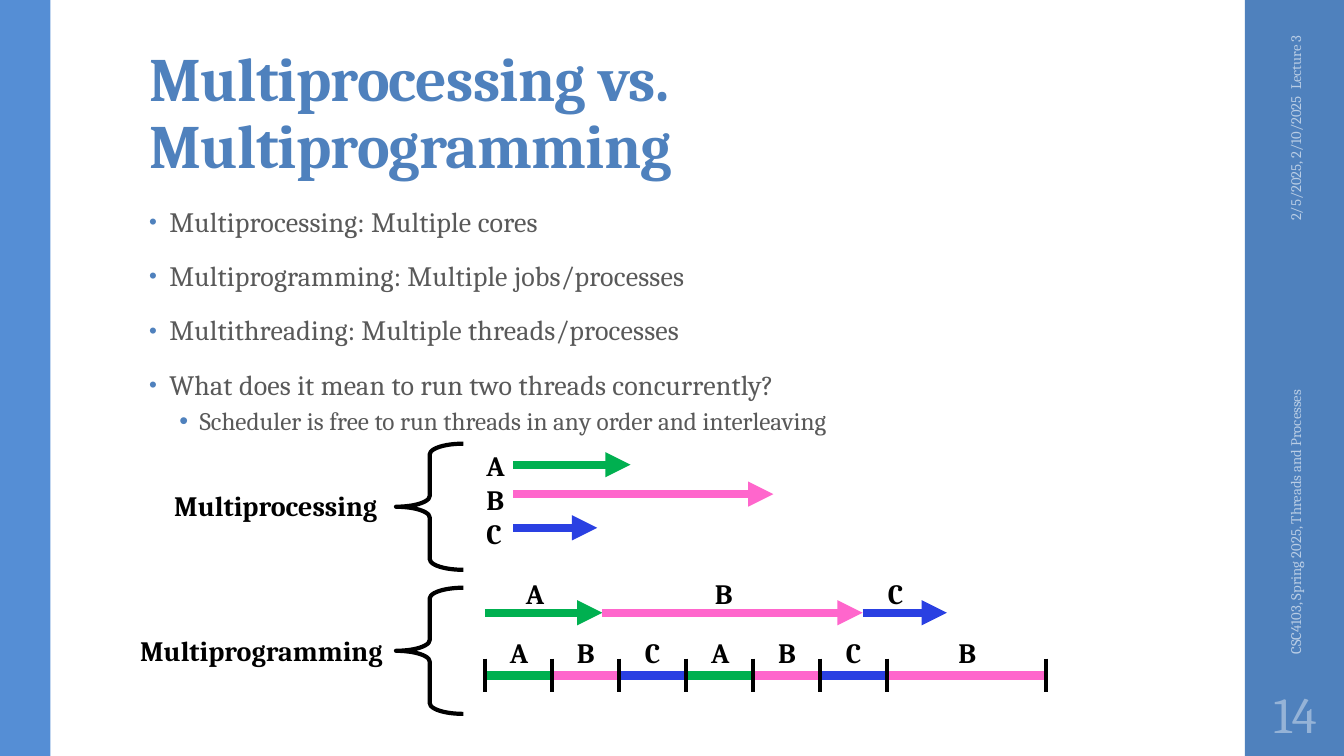
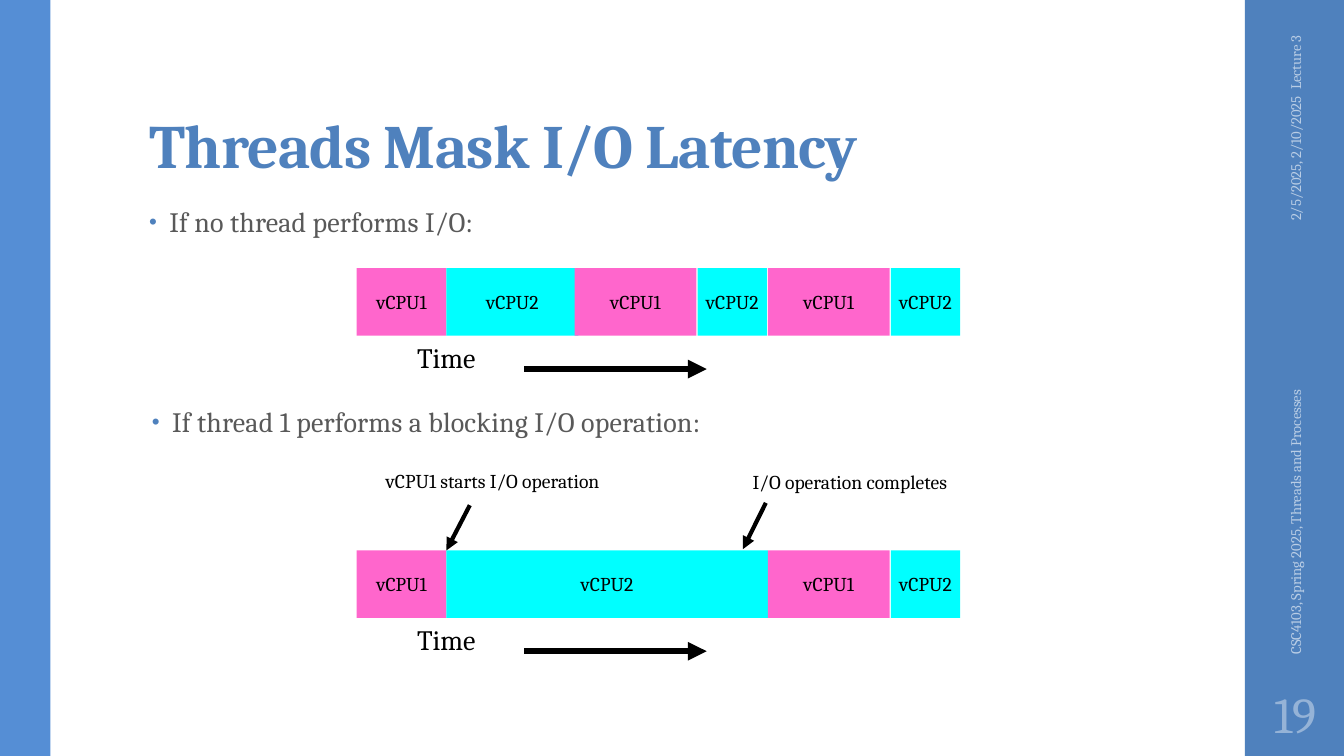
import lxml.etree
import pptx
import pptx.dml.color
import pptx.enum.shapes
import pptx.enum.text
import pptx.oxml.ns
import pptx.util

Cm = pptx.util.Cm
Pt = pptx.util.Pt
qn = pptx.oxml.ns.qn
ALIGN = pptx.enum.text.PP_ALIGN
ANCHOR = pptx.enum.text.MSO_ANCHOR
SHAPES = pptx.enum.shapes.MSO_SHAPE

FONT = "Cambria"
COLORS = {
    "accent": "4F81BD", "left band": "558ED5", "footer": "B9CDE5",
    "number": "95B3D7", "body": "595959", "black": "000000",
    "A": "00B050", "B": "FF66CC", "C": "2A40E2",
    "vCPU1": "FF66CC", "vCPU2": "00FFFF",
}
SLIDE_WIDTH, SLIDE_HEIGHT = 33.87, 19.05
RIGHT_BAND = 31.37
LABEL_HEIGHT, LETTER_WIDTH = 1.12, 0.93


def rgb(name):
    return pptx.dml.color.RGBColor.from_string(COLORS[name])


# Text
def write(paragraph, text, size=20, color="black", bold=False, align=ALIGN.LEFT,
          line=None, before=0, after=0, tracking=0):
    paragraph.alignment = align
    paragraph.line_spacing = line
    paragraph.space_before, paragraph.space_after = Pt(before), Pt(after)
    run = paragraph.add_run()
    run.text = text
    run.font.name, run.font.size, run.font.bold = FONT, Pt(size), bold
    run.font.color.rgb = rgb(color)
    if tracking:
        run.font._element.set("spc", str(round(tracking * 100)))


def add_label(slide, text, left, top, width, height=LABEL_HEIGHT, wrap=False,
              anchor=ANCHOR.TOP, rotation=0, **style):
    label = slide.shapes.add_textbox(Cm(left), Cm(top), Cm(width), Cm(height))
    label.rotation = rotation
    frame = label.text_frame
    frame.word_wrap = wrap
    frame.vertical_anchor = anchor
    write(frame.paragraphs[0], text, **style)


def add_letter(slide, letter, center, top):
    add_label(slide, letter, center - LETTER_WIDTH / 2, top, LETTER_WIDTH,
              bold=True, align=ALIGN.CENTER)


def add_bullets(slide, left, top, height, items):
    body = slide.shapes.add_textbox(Cm(left), Cm(top), Cm(23.88), Cm(height))
    frame = body.text_frame
    frame.word_wrap = True
    for index, (level, text) in enumerate(items):
        paragraph = frame.paragraphs[0] if index == 0 else frame.add_paragraph()
        if level == 0:
            write(paragraph, text, color="body", line=0.95, before=14, after=2, tracking=0.1)
        else:
            write(paragraph, text, size=18, color="body", line=0.9, before=3, after=3)
        paragraph.level = level
        properties = paragraph._p.get_or_add_pPr()
        properties.set("marL", str(Cm(0.51 + 0.76 * level)))
        properties.set("indent", str(-Cm(0.51)))
        tint = lxml.etree.SubElement(properties, qn("a:buClr"))
        lxml.etree.SubElement(tint, qn("a:srgbClr"), val=COLORS["accent"])
        lxml.etree.SubElement(properties, qn("a:buSzPct"), val="100000" if level else "80000")
        lxml.etree.SubElement(properties, qn("a:buFont"), typeface="Arial")
        lxml.etree.SubElement(properties, qn("a:buChar"), char="•")


# Shapes and lines
def add_block(slide, left, top, width, height, color):
    block = slide.shapes.add_shape(SHAPES.RECTANGLE, Cm(left), Cm(top), Cm(width), Cm(height))
    block.shadow.inherit = False
    block.fill.solid()
    block.fill.fore_color.rgb = rgb(color)
    block.line.fill.background()
    return block


def add_brace(slide, top):
    brace = slide.shapes.add_shape(SHAPES.LEFT_BRACE, Cm(9.98), Cm(top), Cm(1.7), Cm(3.18))
    brace.shadow.inherit = False
    brace.adjustments[0] = 0.16
    brace.fill.background()
    brace.line.color.rgb = rgb("black")
    brace.line.width = Pt(3)


def add_line(slide, start, end, color="black", weight=3.0, arrow=False):
    line = slide.shapes.add_connector(
        pptx.enum.shapes.MSO_CONNECTOR.STRAIGHT, *(Cm(value) for value in start + end))
    line.line.color.rgb = rgb(color)
    line.line.width = Pt(weight)
    properties = line._element.spPr
    if arrow:
        lxml.etree.SubElement(properties.find(qn("a:ln")), qn("a:tailEnd"), type="triangle")
    lxml.etree.SubElement(properties, qn("a:effectLst"))


# Frame shared by all slides
def add_slide(deck, title, number):
    slide = deck.slides.add_slide(deck.slide_layouts.get_by_name("Title Only"))
    add_block(slide, RIGHT_BAND, 0, SLIDE_WIDTH - RIGHT_BAND, SLIDE_HEIGHT, "accent")
    add_block(slide, 0, 0, 1.27, SLIDE_HEIGHT, "left band")

    heading = slide.shapes.title
    heading.left, heading.top, heading.width, heading.height = (
        Cm(3.51), Cm(0.81), Cm(26.92), Cm(3.89))
    frame = heading.text_frame
    frame.auto_size = pptx.enum.text.MSO_AUTO_SIZE.NONE
    frame.word_wrap = True
    frame.vertical_anchor = ANCHOR.BOTTOM
    frame.margin_top = Cm(0.08)
    write(frame.paragraphs[0], title, size=44, color="accent", bold=True, line=0.9, tracking=-0.5)

    footer = dict(height=1.02, wrap=True, anchor=ANCHOR.MIDDLE, rotation=270,
                  size=10.5, color="footer")
    add_label(slide, "2/5/2025, 2/10/2025  Lecture 3", 30, 2.77, 5.28,
              align=ALIGN.RIGHT, **footer)
    add_label(slide, "CSC4103, Spring 2025, Threads and Processes", 27.66, 11.25, 9.96, **footer)
    add_label(slide, number, RIGHT_BAND, 17.15, 2.54, 1.65, anchor=ANCHOR.MIDDLE,
              size=36, color="number", align=ALIGN.CENTER)
    return slide


# Multiprocessing: one row for each job
def draw_multiprocessing(slide, jobs):
    add_label(slide, "Multiprocessing", 4.14, 12.19, 6.05, bold=True)
    add_brace(slide, 11.18)
    for row, ((job, length), y) in enumerate(zip(jobs, (11.71, 12.45, 13.3))):
        add_label(slide, job, 12.01, 11.18 + 0.86 * row, LETTER_WIDTH, bold=True)
        add_line(slide, (12.93, y), (12.93 + length, y), job, 6, arrow=True)


# Multiprogramming: jobs in sequence, then interleaved
def draw_multiprogramming(slide, jobs):
    add_label(slide, "Multiprogramming", 3.28, 15.85, 6.91, bold=True)
    add_brace(slide, 14.81)
    start, sequence_y, slices_y = 12.22, 15.44, 17.02

    x = start
    for job, length in jobs:
        add_line(slide, (x, sequence_y), (x + length, sequence_y), job, 6, arrow=True)
        add_letter(slide, job, x + length / 2 - 0.23, 14.4)
        x += length

    edges = [start + 1.69 * step for step in range(7)] + [26.37]
    for job, left, right in zip("ABCABCB", edges, edges[1:]):
        add_line(slide, (left, slices_y), (right, slices_y), job, 6)
        add_letter(slide, job, (left + right) / 2, 15.88)
    for edge in edges:
        add_line(slide, (edge, slices_y - 0.42), (edge, slices_y + 0.42))


# Processor timeline with its time arrow
def draw_timeline(slide, top, bursts):
    for name, left, width in bursts:
        block = add_block(slide, left, top, width, 1.7, name)
        frame = block.text_frame
        frame.word_wrap = False
        frame.vertical_anchor = ANCHOR.MIDDLE
        write(frame.paragraphs[0], name, size=14, align=ALIGN.CENTER)
    add_label(slide, "Time", 10.26, top + 1.7, 2.39)
    add_line(slide, (13.21, top + 2.54), (17.81, top + 2.54), weight=4.5, arrow=True)


def build_multi_slide(deck):
    slide = add_slide(deck, "Multiprocessing vs. Multiprogramming", "14")
    add_bullets(slide, 3.51, 5.08, 12.09, [
        (0, "Multiprocessing: Multiple cores"),
        (0, "Multiprogramming: Multiple jobs/processes"),
        (0, "Multithreading: Multiple threads/processes"),
        (0, "What does it mean to run two threads concurrently?"),
        (1, "Scheduler is free to run threads in any order and interleaving"),
    ])
    jobs = [("A", 2.96), ("B", 6.56), ("C", 2.12)]
    draw_multiprocessing(slide, jobs)
    draw_multiprogramming(slide, jobs)


def build_latency_slide(deck):
    slide = add_slide(deck, "Threads Mask I/O Latency", "19")
    add_bullets(slide, 3.51, 5.08, 1.5, [(0, "If no thread performs I/O:")])
    add_bullets(slide, 3.58, 10.13, 1.5, [(0, "If thread 1 performs a blocking I/O operation:")])

    first = [("vCPU1", 8.99, 2.26)]
    last = [("vCPU1", 19.35, 3.07), ("vCPU2", 22.45, 1.75)]
    shared = [("vCPU2", 11.25, 3.33), ("vCPU1", 14.48, 3.07), ("vCPU2", 17.58, 1.75)]
    draw_timeline(slide, 6.76, first + shared + last)
    draw_timeline(slide, 13.87, first + [("vCPU2", 11.25, 8.1)] + last)

    # Start and end of the I/O operation
    add_label(slide, "vCPU1 starts I/O operation", 9.47, 11.68, 6.83, 0.86, size=14)
    add_line(slide, (11.84, 12.73), (11.25, 13.87), arrow=True)
    add_label(slide, "I/O operation completes", 18.72, 11.71, 5.99, 0.86, size=14)
    add_line(slide, (19.3, 12.67), (18.72, 13.84), arrow=True)


def main():
    deck = pptx.Presentation()
    deck.slide_width, deck.slide_height = Cm(SLIDE_WIDTH), Cm(SLIDE_HEIGHT)
    build_multi_slide(deck)
    build_latency_slide(deck)
    deck.save("out.pptx")


if __name__ == "__main__":
    main()
